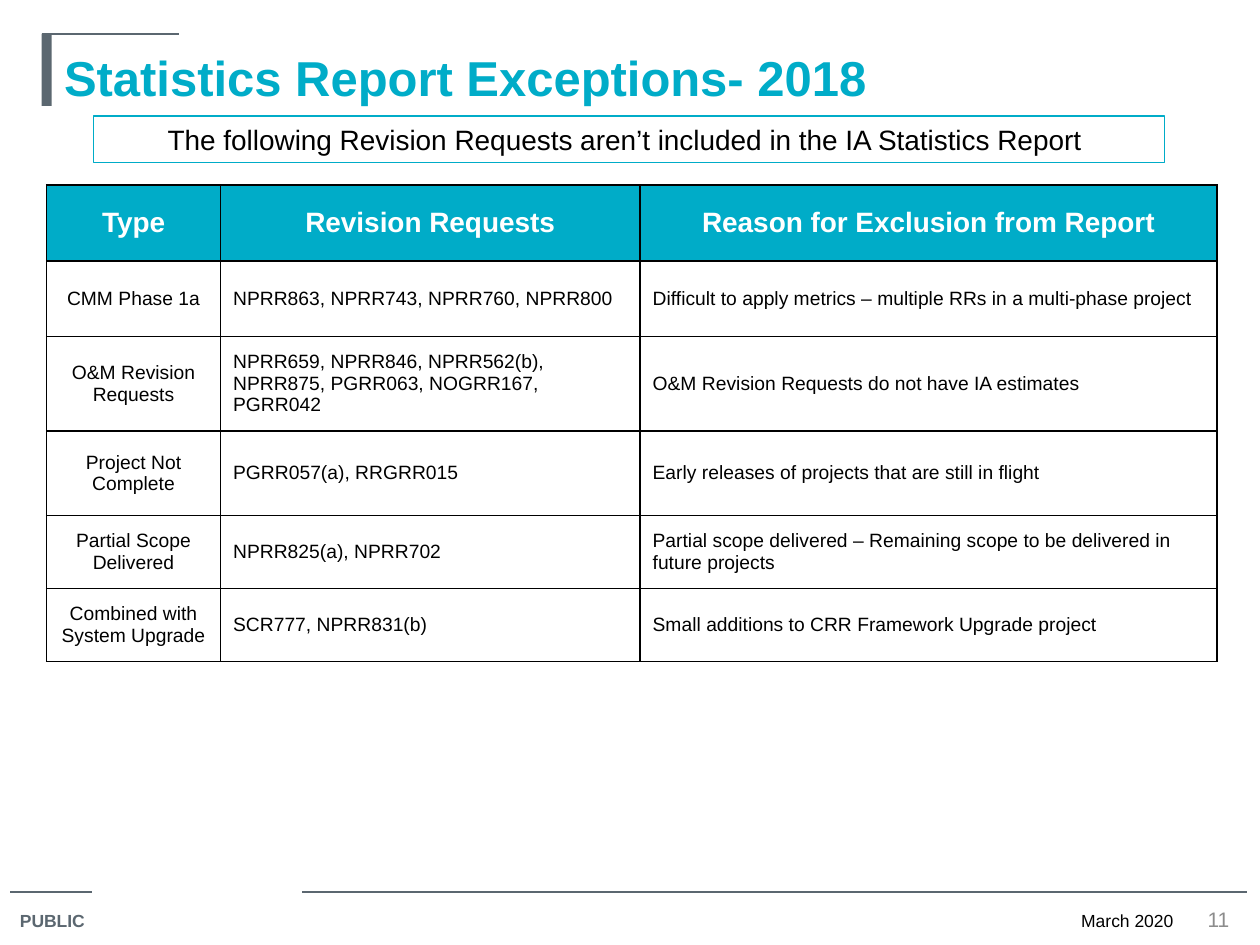
from lxml import etree
from pptx import Presentation
from pptx import util as u
from pptx.dml.color import RGBColor
from pptx.enum import shapes, text
from pptx.oxml import ns

PX = 9144  # EMU per px, 100 px to the inch
TEAL, GRAY, BLACK, WHITE = "00ACC8", "5B6770", "000000", "FFFFFF"
LEFT, MID, RIGHT = text.PP_ALIGN.LEFT, text.PP_ALIGN.CENTER, text.PP_ALIGN.RIGHT


def px(n):
    return u.Emu(n * PX)


def rgb(hue):
    return RGBColor.from_string(hue)


class Deck:
    font = "Arial"
    rule = u.Pt(0.75)

    def __init__(self, wide, high):
        self.prs = Presentation()
        self.prs.slide_width, self.prs.slide_height = px(wide), px(high)
        self.slide = self.prs.slides.add_slide(self.prs.slide_layouts[6])

    def label(self, frame, words, size, hue, align=LEFT, bold=False):
        para = frame.paragraphs[0]
        para.alignment = align
        run = para.add_run()
        run.text = words
        form = {"name": self.font, "size": u.Pt(size), "bold": bold}
        for key, val in form.items():
            setattr(run.font, key, val)
        run.font.color.rgb = rgb(hue)

    def text(self, box, words, size, hue, wrap=True, anchor="TOP", **form):
        frame = self.slide.shapes.add_textbox(*map(px, box)).text_frame
        frame.word_wrap = wrap
        frame.vertical_anchor = text.MSO_ANCHOR[anchor]
        self.label(frame, words, size, hue, **form)

    def rect(self, box, fill, edge=None):
        kind = shapes.MSO_SHAPE.RECTANGLE
        shape = self.slide.shapes.add_shape(kind, *map(px, box))
        shape.shadow.inherit = False
        shape.fill.solid()
        shape.fill.fore_color.rgb = rgb(fill)
        if edge:
            shape.line.color.rgb = rgb(edge)
            shape.line.width = self.rule
        else:
            shape.line.fill.background()
        return shape

    def line(self, x1, x2, y):
        kind = shapes.MSO_CONNECTOR.STRAIGHT
        line = self.slide.shapes.add_connector(kind, px(x1), px(y), px(x2), px(y))
        line.line.color.rgb = rgb(GRAY)
        line.line.width = self.rule
        etree.SubElement(line._element.spPr, ns.qn("a:effectLst"))

    def edge(self, cell, sides):
        props = cell._tc.get_or_add_tcPr()
        for spot, side in enumerate(sides):
            line = etree.Element(ns.qn(f"a:ln{side}"), w=str(u.Pt(1)))
            fill = etree.SubElement(line, ns.qn("a:solidFill"))
            etree.SubElement(fill, ns.qn("a:srgbClr"), val=BLACK)
            props.insert(spot, line)

    def cell(self, cell, words, head, align):
        pad = px(5 if head else 0)
        form = {"margin_left": px(10), "margin_right": px(10),
                "margin_top": pad, "margin_bottom": pad,
                "vertical_anchor": text.MSO_ANCHOR.MIDDLE}
        for key, val in form.items():
            setattr(cell, key, val)
        self.edge(cell, "LRTB")
        if head:
            cell.fill.solid()
            cell.fill.fore_color.rgb = rgb(TEAL)
        else:
            cell.fill.background()
        self.label(cell.text_frame, words, 16 if head else 11,
                   WHITE if head else BLACK, align, head)

    def table(self, left, top, cols, rows, data):
        box = map(px, (left, top, sum(cols), sum(rows)))
        grid = self.slide.shapes.add_table(len(rows), len(cols), *box).table
        grid.first_row = grid.horz_banding = False
        for col, wide in zip(grid.columns, cols):
            col.width = px(wide)
        for row, high in zip(grid.rows, rows):
            row.height = px(high)
        # Open band across the top, behind the banner
        for cell in grid.rows[0].cells:
            self.edge(cell, "B")
            cell.fill.background()
            cell.text_frame.paragraphs[0].font.size = u.Pt(12)
        grid.cell(0, 0).merge(grid.cell(0, len(cols) - 1))
        # Header and body
        for r, row in enumerate(data, 1):
            for c, words in enumerate(row):
                align = MID if r == 1 or c == 0 else LEFT
                self.cell(grid.cell(r, c), words, r == 1, align)


ROWS = [
    ("Type", "Revision Requests", "Reason for Exclusion from Report"),
    ("CMM Phase 1a", "NPRR863, NPRR743, NPRR760, NPRR800",
     "Difficult to apply metrics – multiple RRs in a multi-phase project"),
    ("O&M Revision Requests",
     "NPRR659, NPRR846, NPRR562(b), NPRR875, PGRR063, NOGRR167, PGRR042",
     "O&M Revision Requests do not have IA estimates"),
    ("Project Not Complete", "PGRR057(a), RRGRR015",
     "Early releases of projects that are still in flight"),
    ("Partial Scope Delivered", "NPRR825(a), NPRR702",
     "Partial scope delivered – Remaining scope to be delivered in future projects"),
    ("Combined with System Upgrade", "SCR777, NPRR831(b)",
     "Small additions to CRR Framework Upgrade project"),
]


def main():
    deck = Deck(1000, 750)
    # Footer
    deck.line(8, 73, 708)
    deck.line(240, 990, 708)
    deck.text((6, 717, 77, 28), "PUBLIC", 10, GRAY, wrap=False, bold=True)
    deck.text((808, 717, 133, 24), "March 2020", 10, BLACK, align=RIGHT)
    deck.text((942, 718, 50, 23), "11", 12, "8C8C8C", anchor="MIDDLE", align=MID)
    # Title with corner mark
    deck.rect((33, 27, 8, 57), GRAY)
    deck.line(33, 142, 27)
    deck.text((41, 33, 659, 58), "Statistics Report Exceptions- 2018", 28, TEAL,
              wrap=False, bold=True)
    # Exceptions table
    deck.table(37, 109, (138, 333, 458), (38, 60, 60, 75, 67, 58, 58), ROWS)
    # Banner
    frame = deck.rect((74, 92, 850, 37), WHITE, TEAL).text_frame
    frame.word_wrap = True
    deck.label(frame, "The following Revision Requests aren’t included in the "
               "IA Statistics Report ", 16, BLACK, MID)
    deck.prs.save("out.pptx")


if __name__ == "__main__":
    main()
